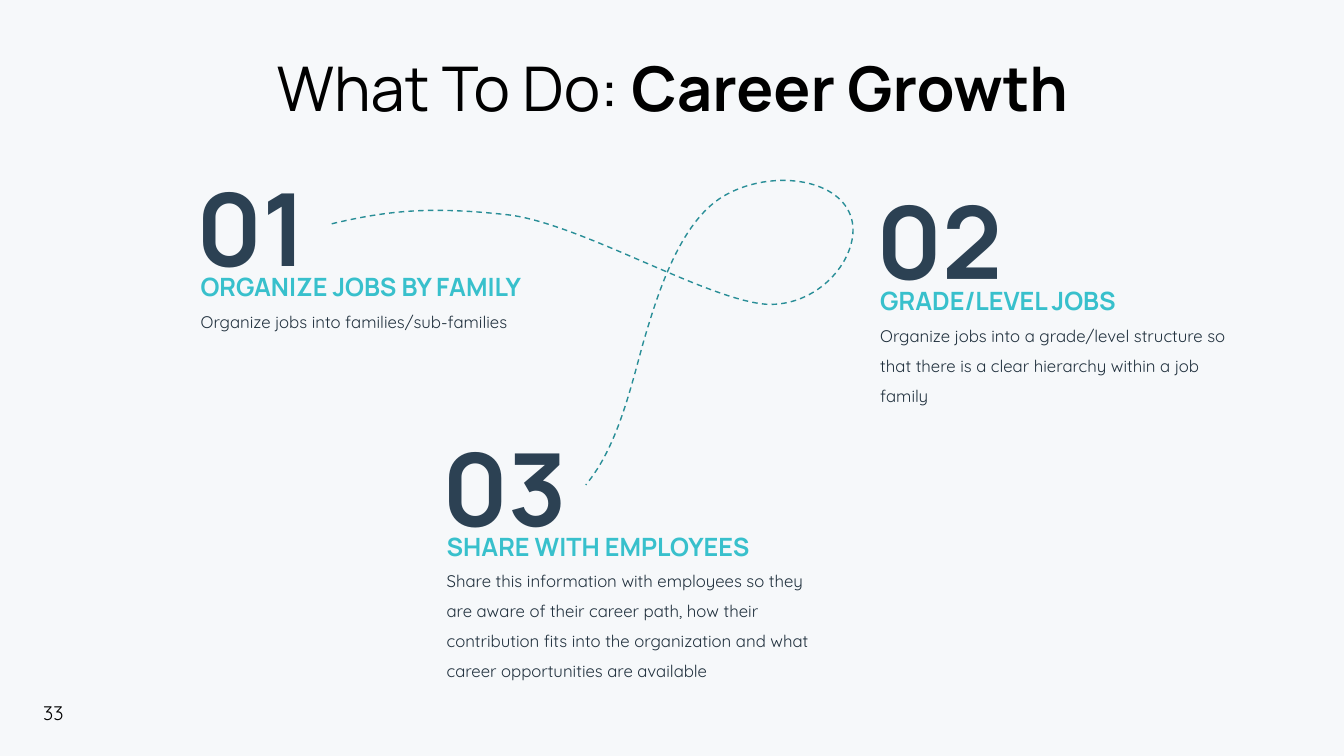
import math

import lxml.etree
import pptx
import pptx.util
import pptx.dml.color
import pptx.enum.dml
import pptx.enum.shapes
import pptx.enum.text
import pptx.oxml.ns

Inches = pptx.util.Inches
Pt = pptx.util.Pt
RGB = pptx.dml.color.RGBColor.from_string
qn = pptx.oxml.ns.qn
ANCHOR = pptx.enum.text.MSO_ANCHOR
ALIGN = pptx.enum.text.PP_ALIGN
AUTO = pptx.enum.text.MSO_AUTO_SIZE

THEME = {
    "background": "F6F8FA",
    "path": "298E97",
    "title": ("Manrope", 44, "000000", False),
    "title_bold": ("Manrope", 44, "000000", True),
    "number": ("Manrope", 72, "2C4153", True),
    "heading": ("Manrope", 18, "38C0CC", True),
    "body": ("Quicksand", 12, "21313E", False),
    "page": ("Quicksand", 14, "000000", False),
}


def style_run(r, style):
    name, size, color, bold = THEME[style]
    r.font.name = name
    r.font.size = Pt(size)
    r.font.color.rgb = RGB(color)
    r.font.bold = bold


def add_text(s, text, style, box, spacing, inset=0, anchor=ANCHOR.TOP, filled=False):
    frame = [Inches(v) for v in box]
    if filled:
        sp = s.shapes.add_shape(pptx.enum.shapes.MSO_SHAPE.RECTANGLE, *frame)
        sp.shadow.inherit = False
        sp.fill.solid()
        sp.fill.fore_color.rgb = RGB(THEME["background"])
        sp.line.fill.background()
    else:
        sp = s.shapes.add_textbox(*frame)
    tf = sp.text_frame
    tf.word_wrap = True
    tf.auto_size = AUTO.SHAPE_TO_FIT_TEXT
    tf.vertical_anchor = anchor
    tf.margin_left = tf.margin_right = Inches(inset)
    tf.margin_top = tf.margin_bottom = Inches(inset / 2)
    tf.text = text
    p = tf.paragraphs[0]
    p.alignment = ALIGN.LEFT
    p.line_spacing = spacing
    style_run(p.runs[0], style)


prs = pptx.Presentation()
prs.slide_width = Inches(13.33)
prs.slide_height = Inches(7.5)
s = prs.slides.add_slide(prs.slide_layouts[5])
s.background.fill.solid()
s.background.fill.fore_color.rgb = RGB(THEME["background"])

title = s.shapes.title
title.left, title.top = Inches(0.72), Inches(0.58)
title.width, title.height = Inches(11.9), Inches(0.65)
tf = title.text_frame
tf.word_wrap = True
tf.auto_size = AUTO.NONE
tf.vertical_anchor = ANCHOR.TOP
tf.margin_left = tf.margin_right = tf.margin_top = tf.margin_bottom = 0
p = tf.paragraphs[0]
p.alignment = ALIGN.CENTER
p.line_spacing = 0.9
for text, style in (("What To Do: ", "title"), ("Career Growth", "title_bold")):
    r = p.add_run()
    r.text = text
    style_run(r, style)

add_text(s, "33", "page", (0.33, 6.9, 1.46, 0.34), 1.0, inset=0.1)

left, top, width, height = 3.5, 1.76, 5.09, 2.99
tilt = -9.6
segments = [
    ("moveTo", [(3.29, 2.22)]),
    ("cubicBezTo", [(3.88, 2.08), (4.29, 2.05), (5.03, 2.13)]),
    ("cubicBezTo", [(5.76, 2.21), (7.08, 3.02), (7.65, 3.02)]),
    ("cubicBezTo", [(8.21, 3.01), (8.59, 2.44), (8.42, 2.1)]),
    ("cubicBezTo", [(8.25, 1.75), (7.6, 1.69), (7.17, 1.95)]),
    ("cubicBezTo", [(6.74, 2.21), (6.52, 2.92), (6.38, 3.4)]),
    ("cubicBezTo", [(6.25, 3.87), (6.12, 4.44), (5.81, 4.81)]),
]
builder = s.shapes.build_freeform(0, 0)
builder.add_line_segments([(Inches(width), Inches(height))], close=False)
trail = builder.convert_to_shape(Inches(left), Inches(top))
outline = trail._element.find(".//" + qn("a:path"))
for child in list(outline):
    outline.remove(child)
cos, sin = math.cos(math.radians(tilt)), math.sin(math.radians(tilt))
for command, points in segments:
    step = lxml.etree.SubElement(outline, qn("a:" + command))
    for x, y in points:
        dx, dy = x - left - width / 2, y - top - height / 2
        pt = lxml.etree.SubElement(step, qn("a:pt"))
        pt.set("x", str(Inches(width / 2 + dx * cos + dy * sin)))
        pt.set("y", str(Inches(height / 2 - dx * sin + dy * cos)))
trail.rotation = tilt
trail.shadow.inherit = False
trail.fill.background()
trail.line.color.rgb = RGB(THEME["path"])
trail.line.width = Pt(1)
trail.line.dash_style = pptx.enum.dml.MSO_LINE.DASH

jobs = [
    (1.99, (1.39, 2.63, 2.99), "ORGANIZE JOBS BY FAMILY", 3.47, 0.26, True,
     "Organize jobs into families/sub-families"),
    (8.73, (1.52, 2.77, 3.13), "GRADE/LEVEL JOBS", 3.11, 0.87, False,
     "Organize jobs into a grade/level structure so that there is a clear hierarchy "
     "within a job family"),
    (4.43, (3.97, 5.21, 5.56), "SHARE WITH EMPLOYEES", 3.35, 1.17, True,
     "Share this information with employees so they are aware of their career path, "
     "how their contribution fits into the organization and what career opportunities "
     "are available"),
]
for n, (x, tops, heading, heading_width, body_height, filled, body) in enumerate(jobs, 1):
    add_text(s, f"{n:02}", "number", (x - 0.04, tops[0], 3.39, 1.45), 1.2,
             anchor=ANCHOR.BOTTOM)
    add_text(s, heading, "heading", (x, tops[1], heading_width, 0.34), 1.2)
    add_text(s, body, "body", (x, tops[2], 3.62, body_height), 1.5, filled=filled)

prs.save("out.pptx")
